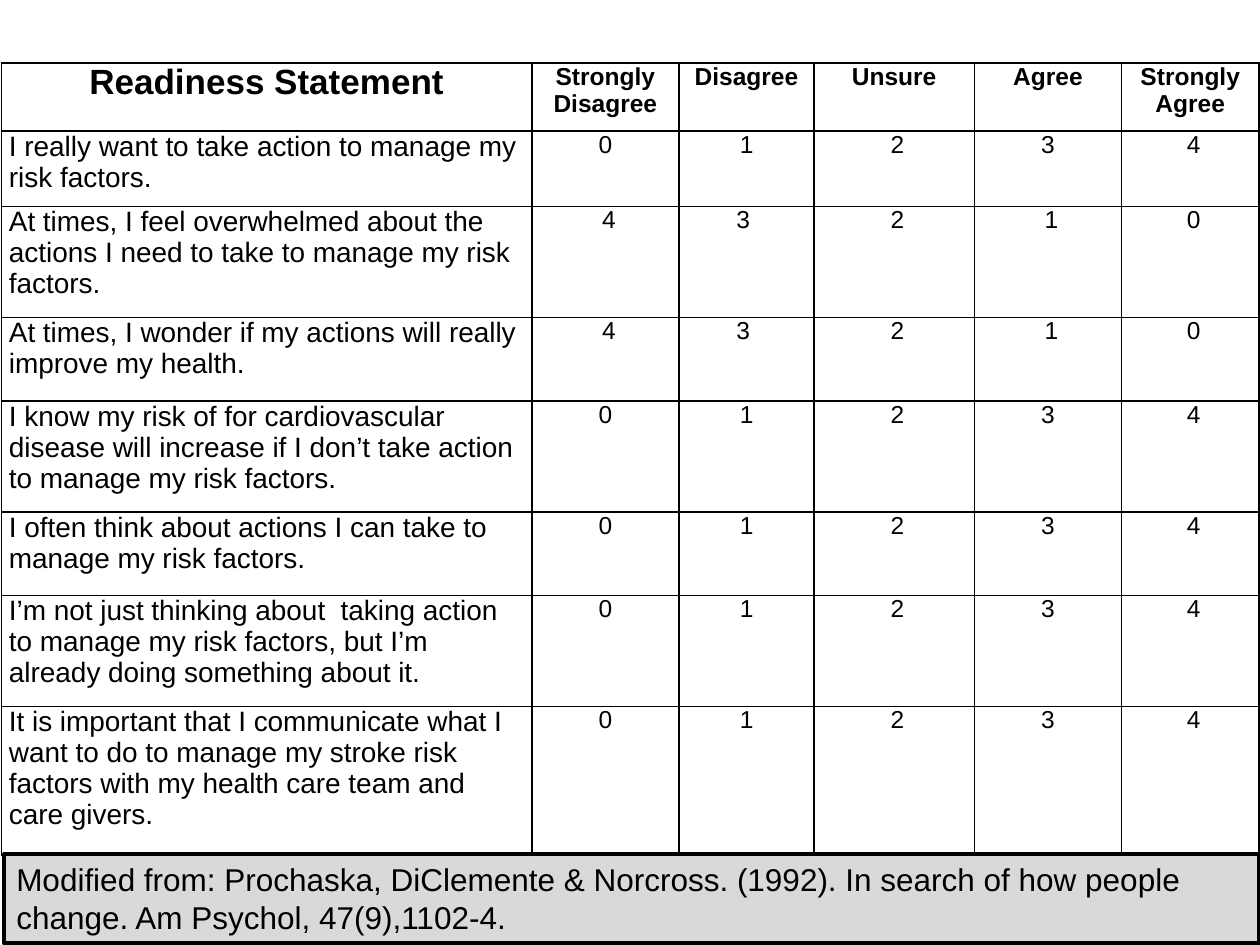
"""Build the readiness statement questionnaire slide."""
import pptx
import pptx.dml.color
import pptx.enum.shapes
import pptx.enum.text
import pptx.oxml
import pptx.oxml.ns
import pptx.util
from pptx.util import Cm

COLOURS = {"ink": "000000", "paper": "FFFFFF", "note": "D9D9D9"}
FONT = "Arial"
COLUMN_WIDTHS = [10.69, 2.97, 2.72, 3.23, 2.97, 2.77]
ROW_HEIGHTS = [1.37, 1.52, 2.24, 1.68, 2.24, 1.68, 2.24, 3.0]
HEADINGS = [
    "Readiness Statement", "Strongly\nDisagree", "Disagree",
    "Unsure", "Agree", "Strongly\nAgree",
]
RISING = ["0", "1", " 2", "3", " 4"]
FALLING = [" 4", "3 ", " 2", " 1", " 0"]
STATEMENTS = [
    ("I really want to take action to manage my risk factors.", RISING),
    ("At times, I feel overwhelmed about the actions I need to take to "
     "manage my risk factors.", FALLING),
    ("At times, I wonder if my actions will really improve my health.", FALLING),
    ("I know my risk of for cardiovascular disease will increase if I don’t "
     "take action to manage my risk factors.", RISING),
    ("I often think about actions I can take to manage my risk factors.", RISING),
    ("I’m not just thinking about  taking action to manage my risk factors, "
     "but I’m already doing something about it.", RISING),
    ("It is important that I communicate what I want to do to manage my "
     "stroke risk factors with my health care team and care givers.", RISING),
]
SOURCE = (
    "Modified from: Prochaska, DiClemente & Norcross. (1992). In search of "
    "how people change. Am Psychol, 47(9),1102-4."
)


def colour(name):
    """Return the named colour."""
    return pptx.dml.color.RGBColor.from_string(COLOURS[name])


def fill_solid(target, name):
    """Fill a shape or cell with the named colour."""
    target.fill.solid()
    target.fill.fore_color.rgb = colour(name)


def write_text(frame, text, size=14, bold=False, centred=False):
    """Write each line of text as a formatted paragraph."""
    align = pptx.enum.text.PP_ALIGN
    frame.word_wrap = True
    frame.text = text
    for paragraph in frame.paragraphs:
        paragraph.alignment = align.CENTER if centred else align.LEFT
        for run in paragraph.runs:
            run.font.name = FONT
            run.font.size = pptx.util.Pt(size)
            run.font.bold = bold
            run.font.color.rgb = colour("ink")


def add_borders(cell, width=1):
    """Draw a solid line on all four sides of a cell."""
    properties = cell._tc.get_or_add_tcPr()
    for index, side in enumerate(("lnL", "lnR", "lnT", "lnB")):
        line = pptx.oxml.parse_xml(
            f'<a:{side} {pptx.oxml.ns.nsdecls("a")} w="{pptx.util.Pt(width)}">'
            f'<a:solidFill><a:srgbClr val="{COLOURS["ink"]}"/></a:solidFill>'
            f"</a:{side}>"
        )
        properties.insert(index, line)


def add_questionnaire(slide, left, top, width, height):
    """Place the table of statements and scores."""
    rows = [HEADINGS] + [[statement, *scores] for statement, scores in STATEMENTS]
    table = slide.shapes.add_table(
        len(rows), len(HEADINGS), Cm(left), Cm(top), Cm(width), Cm(height)
    ).table
    for column, column_width in zip(table.columns, COLUMN_WIDTHS):
        column.width = Cm(column_width)
    for row, row_height in zip(table.rows, ROW_HEIGHTS):
        row.height = Cm(row_height)
    for row_index, row in enumerate(rows):
        for column_index, text in enumerate(row):
            cell = table.cell(row_index, column_index)
            cell.margin_left = cell.margin_right = Cm(0.15)
            cell.margin_top = cell.margin_bottom = 0
            heading, statement = row_index == 0, column_index == 0
            size = (20 if heading else 16) if statement else 14
            write_text(cell.text_frame, text, size=size, bold=heading,
                       centred=heading or not statement)
            fill_solid(cell, "paper")
            add_borders(cell)


def add_source_note(slide, left, top, width, height):
    """Place the shaded box that cites the source."""
    shape = slide.shapes.add_shape(
        pptx.enum.shapes.MSO_SHAPE.RECTANGLE,
        Cm(left), Cm(top), Cm(width), Cm(height),
    )
    shape.shadow.inherit = False
    fill_solid(shape, "note")
    shape.line.color.rgb = colour("ink")
    shape.line.width = pptx.util.Pt(2.25)
    shape.text_frame.vertical_anchor = pptx.enum.text.MSO_ANCHOR.TOP
    write_text(shape.text_frame, SOURCE, size=18)
    shape.text_frame.auto_size = pptx.enum.text.MSO_AUTO_SIZE.SHAPE_TO_FIT_TEXT


def main():
    """Build and save the presentation."""
    presentation = pptx.Presentation()
    presentation.slide_width, presentation.slide_height = Cm(25.4), Cm(19.05)
    slide = presentation.slides.add_slide(presentation.slide_layouts[6])
    add_questionnaire(slide, 0.03, 1.27, sum(COLUMN_WIDTHS), sum(ROW_HEIGHTS))
    add_source_note(slide, 0.08, 17.22, 25.3, 1.8)
    presentation.save("out.pptx")


if __name__ == "__main__":
    main()
